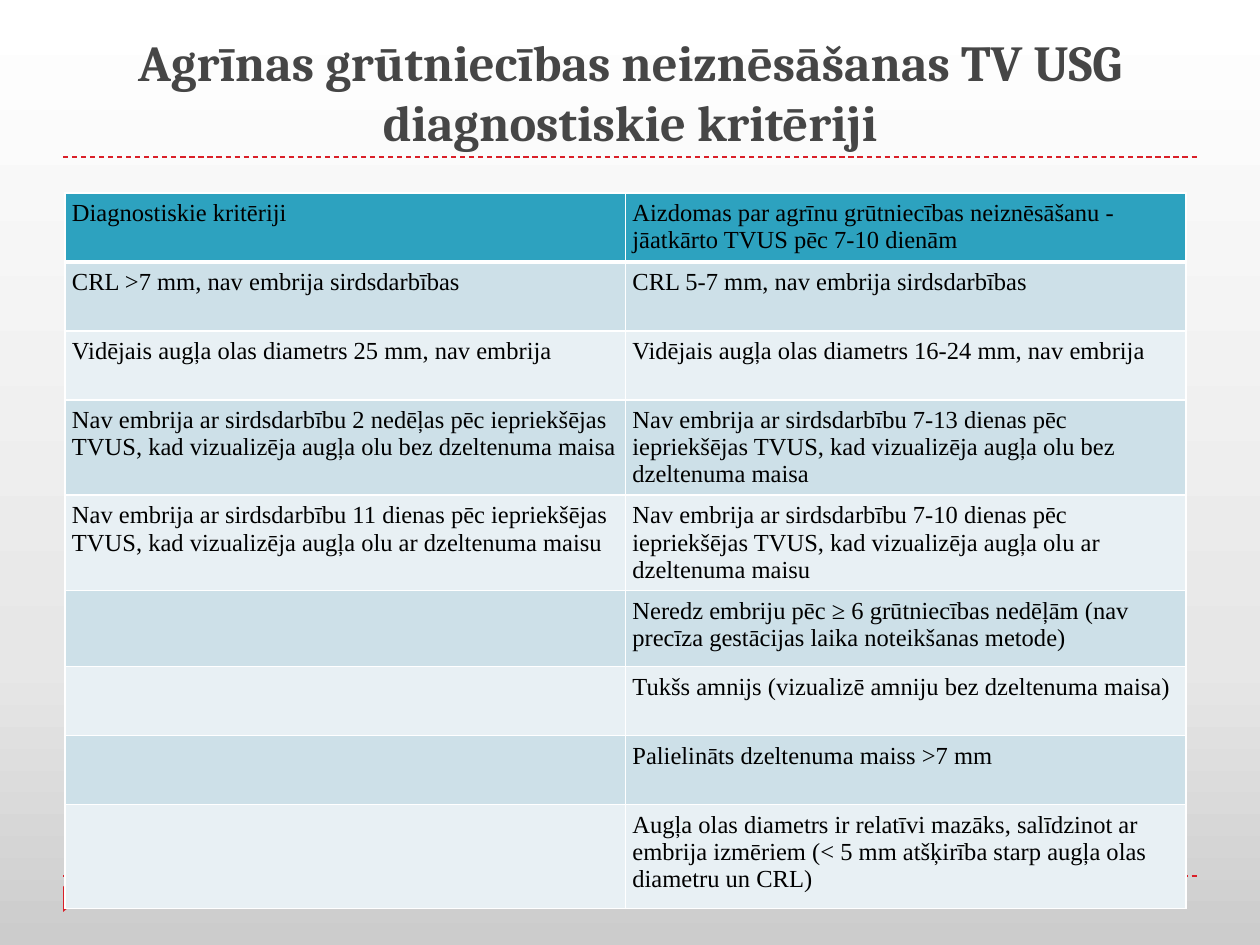
from copy import deepcopy
from dataclasses import dataclass

from lxml.etree import SubElement
from pptx import Presentation
from pptx.dml.color import RGBColor
from pptx.enum.dml import MSO_LINE
from pptx.enum.shapes import MSO_CONNECTOR, MSO_SHAPE
from pptx.enum.text import MSO_ANCHOR, PP_ALIGN
from pptx.oxml.ns import qn
from pptx.util import Pt

EMU_PER_PX = 914400 / 126


@dataclass(frozen=True)
class Theme:
    accent: str = "DA1F28"
    title: str = "464646"
    text: str = "000000"
    header: str = "2DA2BF"
    bands: tuple = ("CDE0E8", "E8F0F4")
    border: str = "FFFFFF"
    background: tuple = ((0, "CCCCCC"), (0.3, "E7E7E7"), (1, "FFFFFF"))
    title_font: str = "Cambria"
    table_font: str = "Times New Roman"
    title_size: float = 28.8
    table_size: float = 14


theme = Theme()


def px(*lengths):
    """Turn pixel lengths into a list of EMU."""
    return [round(length * EMU_PER_PX) for length in lengths]


def add_run(paragraph, text, font_name, size, color, bold=False):
    run = paragraph.add_run()
    run.text = text
    run.font.name = font_name
    run.font.size = Pt(size)
    run.font.bold = bold
    run.font.color.rgb = RGBColor.from_string(color)


presentation = Presentation()
presentation.slide_width, presentation.slide_height = px(1260, 945)
slide = presentation.slides.add_slide(presentation.slide_layouts[5])

# Background
background_fill = slide.background.fill
background_fill.gradient()
background_fill.gradient_angle = 90
stop_list = slide.background._cSld.find(".//" + qn("a:gsLst"))
stop_list.append(deepcopy(stop_list[-1]))
for stop, (position, color) in zip(background_fill.gradient_stops, theme.background):
    stop.position = position
    stop.color.rgb = RGBColor.from_string(color)

# Dashed rules and corner marker
for y in (876, 157):
    rule = slide.shapes.add_connector(MSO_CONNECTOR.STRAIGHT, *px(63, y, 1197, y))
    rule.line.color.rgb = RGBColor.from_string(theme.accent)
    rule.line.width = Pt(0.75)
    rule.line.dash_style = MSO_LINE.DASH
    SubElement(rule._element.spPr, qn("a:effectLst"))

marker = slide.shapes.add_shape(MSO_SHAPE.ISOSCELES_TRIANGLE, *px(58, 891, 26, 16))
marker.rotation = 90
marker.shadow.inherit = False
marker.fill.solid()
marker.fill.fore_color.rgb = RGBColor.from_string(theme.accent)
marker.line.fill.background()

# Title
title = slide.shapes.title
title.left, title.top, title.width, title.height = px(63, 32, 1134, 126)
title.text_frame.word_wrap = True
title.text_frame.vertical_anchor = MSO_ANCHOR.BOTTOM
title_paragraph = title.text_frame.paragraphs[0]
title_paragraph.alignment = PP_ALIGN.CENTER
add_run(title_paragraph, "Agrīnas grūtniecības neiznēsāšanas TV USG diagnostiskie kritēriji",
        theme.title_font, theme.title_size, theme.title, bold=True)

# Criteria table: height in px, definite criterion, suspicious criterion
criteria = [
    (69, "Diagnostiskie kritēriji",
     "Aizdomas par agrīnu grūtniecības neiznēsāšanu - jāatkārto TVUS pēc 7-10 dienām"),
    (69, "CRL >7 mm, nav embrija sirdsdarbības",
     "CRL 5-7 mm, nav embrija sirdsdarbības"),
    (69, "Vidējais augļa olas diametrs 25 mm, nav embrija",
     "Vidējais augļa olas diametrs 16-24 mm, nav embrija"),
    (95, "Nav embrija ar sirdsdarbību 2 nedēļas pēc iepriekšējas TVUS, "
         "kad vizualizēja augļa olu bez dzeltenuma maisa",
     "Nav embrija ar sirdsdarbību 7-13 dienas pēc iepriekšējas TVUS, "
     "kad vizualizēja augļa olu bez dzeltenuma maisa"),
    (95, "Nav embrija ar sirdsdarbību 11 dienas pēc iepriekšējas TVUS, "
         "kad vizualizēja augļa olu ar dzeltenuma maisu",
     "Nav embrija ar sirdsdarbību 7-10 dienas pēc iepriekšējas TVUS, "
     "kad vizualizēja augļa olu ar dzeltenuma maisu"),
    (76, "", "Neredz embriju pēc ≥ 6 grūtniecības nedēļām "
             "(nav precīza gestācijas laika noteikšanas metode)"),
    (69, "", "Tukšs amnijs (vizualizē amniju bez dzeltenuma maisa)"),
    (69, "", "Palielināts dzeltenuma maiss >7 mm"),
    (104, "", "Augļa olas diametrs ir relatīvi mazāks, salīdzinot ar embrija izmēriem "
              "(< 5 mm atšķirība starp augļa olas diametru un CRL)"),
]
table_height = sum(height for height, *_ in criteria)
table = slide.shapes.add_table(len(criteria), 2, *px(65, 193, 1121, table_height)).table
for row_index, (height, *texts) in enumerate(criteria):
    table.rows[row_index].height = px(height)[0]
    fill_color = theme.bands[(row_index - 1) % 2] if row_index else theme.header
    # The edge between header and body is thicker
    border_widths = {"a:lnL": 1, "a:lnR": 1,
                     "a:lnT": 3 if row_index == 1 else 1,
                     "a:lnB": 3 if row_index == 0 else 1}
    for cell, text in zip(table.rows[row_index].cells, texts):
        cell.margin_left, cell.margin_top, cell.margin_right, cell.margin_bottom = px(7, 7, 7, 7)
        for tag, width in border_widths.items():
            border = SubElement(cell._tc.get_or_add_tcPr(), qn(tag), w=str(Pt(width)))
            border_fill = SubElement(border, qn("a:solidFill"))
            SubElement(border_fill, qn("a:srgbClr"), val=theme.border)
        cell.fill.solid()
        cell.fill.fore_color.rgb = RGBColor.from_string(fill_color)
        if text:
            add_run(cell.text_frame.paragraphs[0], text,
                    theme.table_font, theme.table_size, theme.text)

presentation.save("out.pptx")
